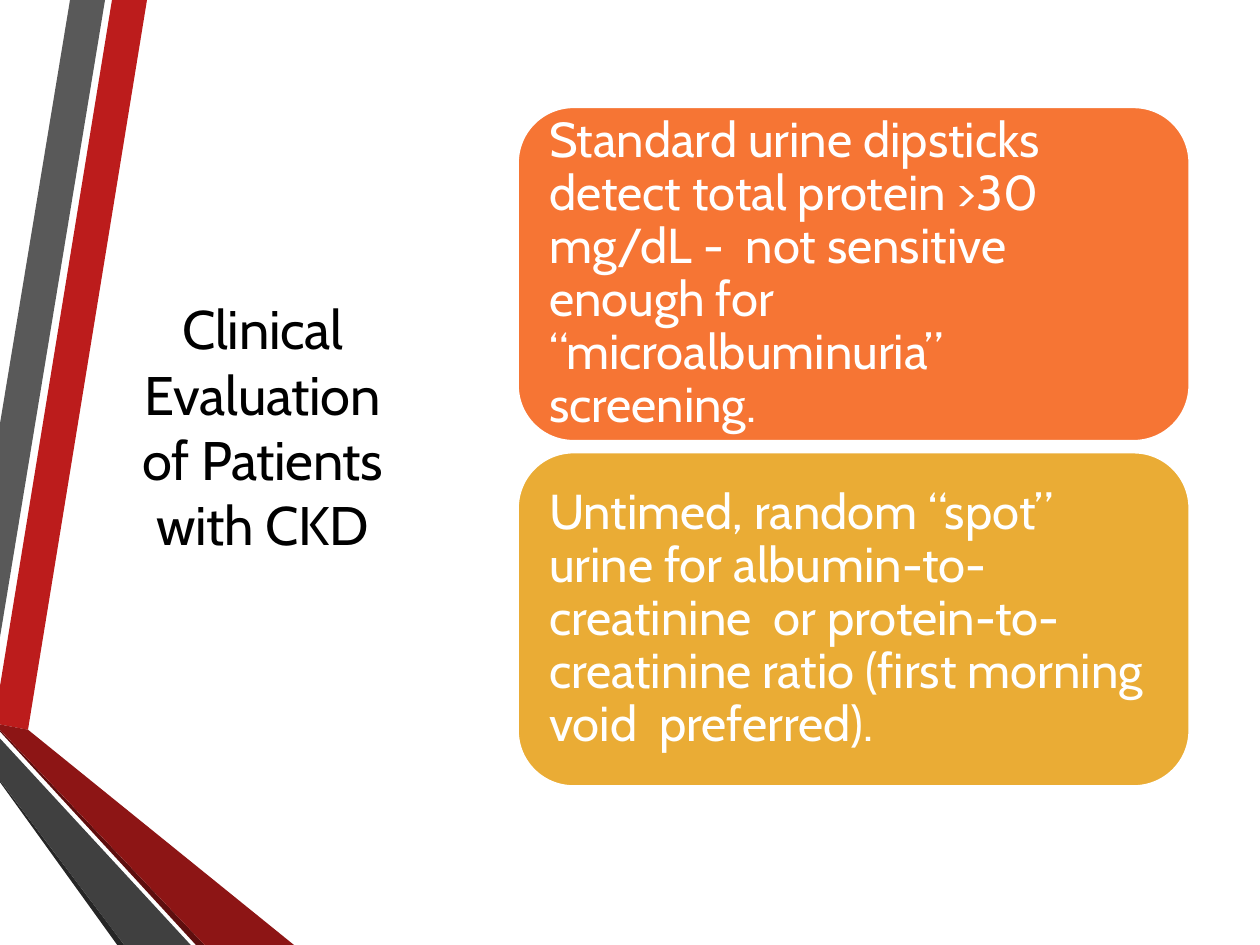
from pptx import Presentation
from pptx import util as u
from pptx.dml import color
from pptx.enum import shapes, text

HUES = {
    "red": "BC1C1C", "grey": "595959", "black": "000000", "white": "FFFFFF",
    "coal": "262626", "slate": "404040", "wine": "8D1515", "blood": "5E0E0E",
    "orange": "F67534", "gold": "EAAC35",
}
WIDE, HIGH = 720, 540

BANDS = [
    ("red", [(0, 391.7), (0, 414), (15.8, 416.9), (84.2, 0), (64.1, 0)]),
    ("grey", [(59.8, 0), (39.6, 0), (0, 241.9), (0, 364.3)]),
    ("coal", [(0, 445.7), (0, 447.1), (67, HIGH), (71.3, HIGH)]),
    ("blood", [(0, 416.9), (0, 417.6), (112.3, HIGH), (117.4, HIGH)]),
    ("wine", [(0, 416.9), (117.4, HIGH), (167.8, HIGH), (15.8, 416.9), (0, 414)]),
    ("slate", [(0, 445.7), (71.3, HIGH), (108.7, HIGH), (0, 421.9)]),
]
CARDS = [
    ("orange", "Standard urine dipsticks detect total protein >30 mg/dL -  not "
               "sensitive enough for “microalbuminuria” screening."),
    ("gold", "Untimed, random “spot” urine for albumin-to-creatinine  or "
             "protein-to-creatinine ratio (first morning void  preferred)."),
]


def apply(item, style):
    for name, value in style.items():
        setattr(item, name, value)


class Deck:
    font = "Cabin"

    def __init__(self):
        self.show = Presentation()
        apply(self.show, {"slide_width": u.Pt(WIDE), "slide_height": u.Pt(HIGH)})
        self.slide = self.show.slides.add_slide(self.show.slide_layouts[5])

    def hue(self, name):
        return color.RGBColor.from_string(HUES[name])

    def paint(self, shape, fill):
        shape.shadow.inherit = False
        shape.fill.solid()
        shape.fill.fore_color.rgb = self.hue(fill)

    def label(self, shape, words, size, tint, align, lead, inset):
        frame = shape.text_frame
        frame.text = words
        apply(frame, {
            "word_wrap": True, "auto_size": text.MSO_AUTO_SIZE.NONE,
            "vertical_anchor": text.MSO_ANCHOR.MIDDLE,
            **{f"margin_{side}": u.Pt(inset)
               for side in ("left", "top", "right", "bottom")},
        })
        para = frame.paragraphs[0]
        apply(para, {"alignment": align, "line_spacing": lead})
        run = para.runs[0]
        apply(run.font, {"name": self.font, "size": u.Pt(size)})
        run.font.color.rgb = self.hue(tint)
        return run

    def band(self, fill, dots):
        pen = self.slide.shapes.build_freeform(*dots[0], scale=u.Pt(1))
        pen.add_line_segments(dots[1:], close=True)
        shape = pen.convert_to_shape()
        self.paint(shape, fill)
        shape.line.fill.background()

    def title(self, words, left, top, width, height):
        box = self.slide.shapes.title
        apply(box, {"left": u.Pt(left), "top": u.Pt(top),
                    "width": u.Pt(width), "height": u.Pt(height)})
        run = self.label(box, words, 31, "black", text.PP_ALIGN.CENTER, 1.0, 7.2)
        run._r.get_or_add_rPr().set("spc", "-10")

    def card(self, fill, words, *place):
        shape = self.slide.shapes.add_shape(
            shapes.MSO_SHAPE.ROUNDED_RECTANGLE, *map(u.Pt, place))
        self.paint(shape, fill)
        shape.line.width = u.Pt(1.25)
        shape.line.color.rgb = self.hue("white")
        self.label(shape, words, 28, "white", text.PP_ALIGN.LEFT, 0.9, 8.6)

    def save(self):
        self.show.save("out.pptx")


def main():
    deck = Deck()
    for fill, dots in BANDS:
        deck.band(fill, dots)
    deck.title("Clinical Evaluation of Patients with CKD", 72, 41.8, 156.2, 403.2)
    for row, (fill, words) in enumerate(CARDS):
        deck.card(fill, words, 295.9, 61.2 + row * 197.3, 383.8, 190.8)
    deck.save()


if __name__ == "__main__":
    main()
